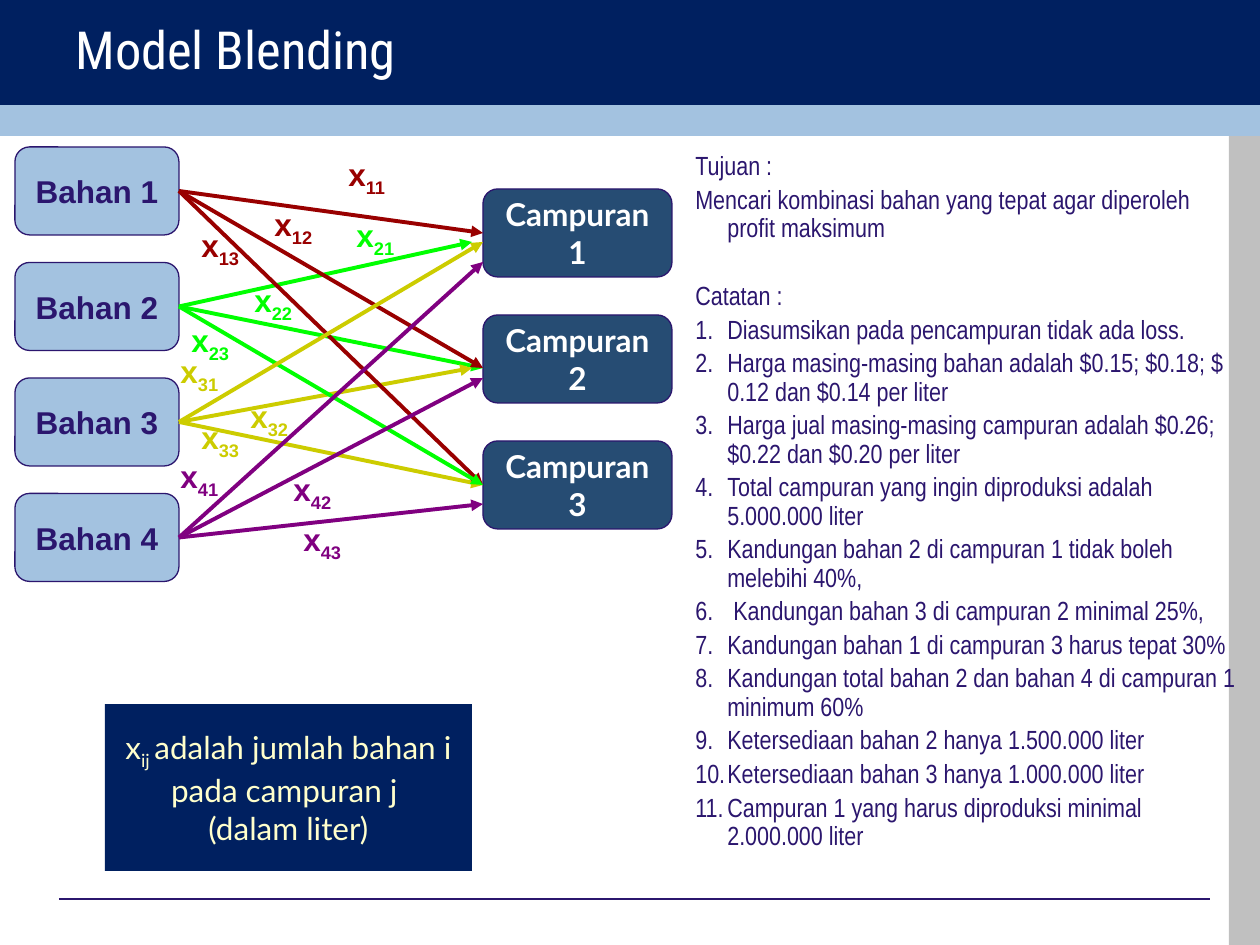
from pptx import Presentation
from pptx.dml.color import RGBColor
from pptx.enum.shapes import MSO_CONNECTOR, MSO_SHAPE
from pptx.enum.text import MSO_ANCHOR, PP_ALIGN
from pptx.oxml.xmlchemy import OxmlElement
from pptx.util import Emu, Pt

SCALE = 914400 / 126
THEME = {
    "navy": RGBColor.from_string("002060"),
    "sky": RGBColor.from_string("A3C2E0"),
    "steel": RGBColor.from_string("264C73"),
    "grey": RGBColor.from_string("C0C0C0"),
    "ink": RGBColor.from_string("2B166E"),
    "white": RGBColor.from_string("FFFFFF"),
    "cream": RGBColor.from_string("FFFFCC"),
    "flows": [RGBColor.from_string(c) for c in ("990000", "00FF00", "CCCC00", "800080")],
    "title": {"size": Pt(30), "name": "Roboto Condensed"},
    "bahan": {"size": Pt(18), "name": "Arial", "bold": True},
    "campuran": {"size": Pt(18), "name": "Lato", "bold": True},
    "legend": {"size": Pt(18), "name": "Lato"},
    "notes": {"size": Pt(15), "name": "Arial Narrow"},
}


def px(*values):
    return [Emu(round(v * SCALE)) for v in values]


def write(p, runs, style, color):
    for text, baseline in runs:
        r = p.add_run()
        r.text = text
        for key, value in THEME[style].items():
            setattr(r.font, key, value)
        r.font.color.rgb = color
        if baseline:
            r._r.get_or_add_rPr().set("baseline", str(baseline))


prs = Presentation()
prs.slide_width, prs.slide_height = px(1260, 945)
s = prs.slides.add_slide(prs.slide_layouts[6])

bands = [
    ((1229, 135, 31, 810), "grey"),
    ((0, 0, 1260, 105), "navy"),
    ((0, 105, 1260, 31), "sky"),
]
for box, fill in bands:
    sp = s.shapes.add_shape(MSO_SHAPE.RECTANGLE, *px(*box))
    sp.shadow.inherit = False
    sp.fill.solid()
    sp.fill.fore_color.rgb = THEME[fill]
    sp.line.fill.background()

rule = s.shapes.add_connector(MSO_CONNECTOR.STRAIGHT, *px(59, 899, 1210, 899))
rule.line.color.rgb = THEME["ink"]
rule.line.width = Pt(0.75)
rule._element.spPr.append(OxmlElement("a:effectLst"))

tf = s.shapes.add_textbox(*px(63, 10, 851, 78)).text_frame
tf.word_wrap = True
tf.vertical_anchor = MSO_ANCHOR.MIDDLE
write(tf.paragraphs[0], [("Model Blending", 0)], "title", THEME["white"])

columns = [
    ("bahan", 4, (15, 147), 115.5, (164, 88), "sky", "ink", "Bahan {}"),
    ("campuran", 3, (483, 189), 126, (189, 88), "steel", "white", "Campuran\n{}"),
]
nodes = {}
for name, count, (left, top), pitch, size, fill, color, label in columns:
    for i in range(count):
        sp = s.shapes.add_shape(MSO_SHAPE.ROUNDED_RECTANGLE, *px(left, top + i * pitch, *size))
        sp.shadow.inherit = False
        sp.fill.solid()
        sp.fill.fore_color.rgb = THEME[fill]
        sp.line.color.rgb = THEME["ink"]
        sp.line.width = Pt(0.75)
        tf = sp.text_frame
        tf.word_wrap = False
        tf.vertical_anchor = MSO_ANCHOR.MIDDLE
        for n, line in enumerate(label.format(i + 1).split("\n")):
            p = tf.add_paragraph() if n else tf.paragraphs[0]
            p.alignment = PP_ALIGN.CENTER
            write(p, [(line, 0)], name, THEME[color])
        nodes[name, i + 1] = sp

flows = [
    (1, 1, None, (336, 149)),
    (2, 2, (483, 368), (242, 275)),
    (3, 3, None, (189, 412)),
    (4, 3, (483, 504), (291, 514)),
    (3, 2, (472, 368), (238, 391)),
    (2, 1, (472, 242), (344, 210)),
    (1, 2, (483, 368), (262, 199)),
    (1, 3, None, (189, 220)),
    (2, 3, None, (179, 315)),
    (3, 1, (483, 242), (168, 346)),
    (4, 2, (483, 378), (281, 464)),
    (4, 1, (483, 262), (168, 451)),
]
for i, j, end, _ in flows:
    arrow = s.shapes.add_connector(MSO_CONNECTOR.STRAIGHT, *px(179, 147, *(end or (483, 189))))
    arrow.begin_connect(nodes["bahan", i], 3)
    if end is None:
        arrow.end_connect(nodes["campuran", j], 1)
    arrow.line.color.rgb = THEME["flows"][i - 1]
    arrow.line.width = Pt(2.25)
    tail = OxmlElement("a:tailEnd")
    tail.set("type", "triangle")
    arrow.line._get_or_add_ln().append(tail)
    arrow._element.spPr.append(OxmlElement("a:effectLst"))

for i, j, _, corner in flows:
    tf = s.shapes.add_textbox(*px(*corner, 66, 50)).text_frame
    tf.word_wrap = False
    write(tf.paragraphs[0], [("x", 0), (f"{i}{j}", -25000)], "bahan", THEME["flows"][i - 1])

heads = [
    ("Tujuan :", 0),
    ("Mencari kombinasi bahan yang tepat agar diperoleh profit maksimum", 3),
    ("Catatan :", 22.4),
]
notes = [
    "Diasumsikan pada pencampuran tidak ada loss.",
    "Harga masing-masing bahan adalah $0.15; $0.18; $ 0.12 dan $0.14 per liter",
    "Harga jual masing-masing campuran adalah $0.26; $0.22 dan $0.20 per liter",
    "Total campuran yang ingin diproduksi adalah 5.000.000 liter",
    "Kandungan bahan 2 di campuran 1 tidak boleh melebihi 40%,",
    " Kandungan bahan 3 di campuran 2 minimal 25%,",
    "Kandungan bahan 1 di campuran 3 harus tepat 30%",
    "Kandungan total bahan 2 dan bahan 4 di campuran 1 minimum 60%",
    "Ketersediaan bahan 2 hanya 1.500.000 liter",
    "Ketersediaan bahan 3 hanya 1.000.000 liter",
    "Campuran 1 yang harus diproduksi minimal 2.000.000 liter",
]
tf = s.shapes.add_textbox(*px(683, 147, 567, 746)).text_frame
tf.word_wrap = True
indent, = px(32)
for n, (text, before) in enumerate(heads + [(note, 3) for note in notes]):
    p = tf.add_paragraph() if n else tf.paragraphs[0]
    pPr = p._p.get_or_add_pPr()
    pPr.set("marL", str(indent))
    pPr.set("indent", str(-indent))
    if n >= len(heads):
        number = OxmlElement("a:buAutoNum")
        number.set("type", "arabicPeriod")
        pPr.append(number)
    for key, value in {"line_spacing": 0.9, "space_before": Pt(before)}.items():
        setattr(p, key, value)
    write(p, [(text, 0)], "notes", THEME["ink"])

sp = s.shapes.add_shape(MSO_SHAPE.RECTANGLE, *px(105, 704, 367, 167))
sp.shadow.inherit = False
sp.fill.solid()
sp.fill.fore_color.rgb = THEME["navy"]
sp.line.fill.background()
tf = sp.text_frame
tf.word_wrap = True
tf.vertical_anchor = MSO_ANCHOR.MIDDLE
legend = [
    [("x", 0), ("ij ", -25000), ("adalah jumlah bahan i pada campuran j ", 0)],
    [("(dalam liter)", 0)],
]
for n, runs in enumerate(legend):
    p = tf.add_paragraph() if n else tf.paragraphs[0]
    p.alignment = PP_ALIGN.CENTER
    write(p, runs, "legend", THEME["cream"])

prs.save("out.pptx")
